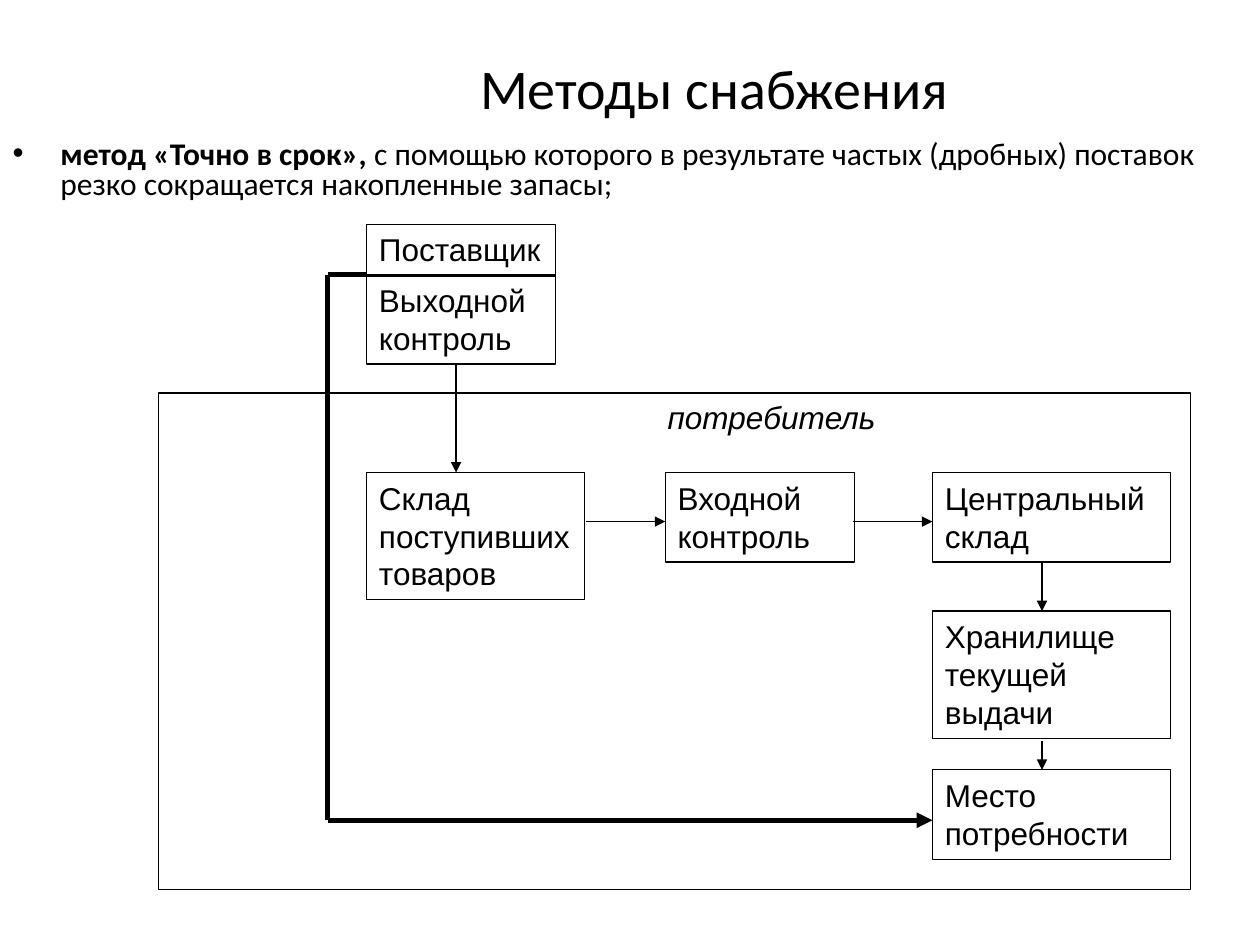
from dataclasses import dataclass
from typing import Optional

from lxml.etree import SubElement
from pptx import Presentation
from pptx.dml.color import RGBColor
from pptx.enum.shapes import MSO_CONNECTOR, MSO_SHAPE
from pptx.enum.text import MSO_ANCHOR, MSO_AUTO_SIZE, PP_ALIGN
from pptx.oxml.ns import qn
from pptx.util import Emu, Pt

PX = 9144  # EMU per px, 100 px to the inch


@dataclass(frozen=True)
class Theme:
    ink: RGBColor = RGBColor(0, 0, 0)
    heading_font: str = "Calibri"
    diagram_font: str = "Arial"
    title_size: Pt = Pt(32)
    text_size: Pt = Pt(18)
    thin: Pt = Pt(0.75)
    thick: Pt = Pt(3)


@dataclass(frozen=True)
class Box:
    left: int
    top: int
    width: int
    height: int
    label: Optional[str] = None


@dataclass(frozen=True)
class Link:
    x1: int
    y1: int
    x2: int
    y2: int
    weight: Pt
    arrow: bool = True


THEME = Theme()


def px(length: int) -> Emu:
    return Emu(length * PX)


def place(shape, box: Box) -> None:
    shape.left, shape.top = px(box.left), px(box.top)
    shape.width, shape.height = px(box.width), px(box.height)


def style_font(font, name: str, size: Pt) -> None:
    font.name, font.size = name, size
    font.color.rgb = THEME.ink


def write_label(shape, label: str, italic: bool = False) -> None:
    frame = shape.text_frame
    frame.word_wrap = True
    frame.auto_size = MSO_AUTO_SIZE.SHAPE_TO_FIT_TEXT
    frame.vertical_anchor = MSO_ANCHOR.TOP
    paragraph = frame.paragraphs[0]
    paragraph.text = label
    paragraph.alignment = PP_ALIGN.LEFT
    style_font(paragraph.font, THEME.diagram_font, THEME.text_size)
    paragraph.font.italic = italic


def draw_box(slide, box: Box) -> None:
    rect = slide.shapes.add_shape(MSO_SHAPE.RECTANGLE, 0, 0, 0, 0)
    place(rect, box)
    rect.shadow.inherit = False
    rect.fill.background()
    rect.line.color.rgb = THEME.ink
    rect.line.width = THEME.thin
    if box.label:
        write_label(rect, box.label)


def draw_link(slide, link: Link) -> None:
    line = slide.shapes.add_connector(
        MSO_CONNECTOR.STRAIGHT, px(link.x1), px(link.y1), px(link.x2), px(link.y2))
    line.line.color.rgb = THEME.ink
    line.line.width = link.weight
    properties = line._element.spPr
    if link.arrow:
        SubElement(properties.find(qn("a:ln")), qn("a:tailEnd"), type="triangle")
    SubElement(properties, qn("a:effectLst"))


def fill_title(slide) -> None:
    title = slide.shapes.title
    place(title, Box(217, 36, 700, 66))
    title.text_frame.auto_size = MSO_AUTO_SIZE.NONE
    title.text_frame.vertical_anchor = MSO_ANCHOR.MIDDLE
    heading = title.text_frame.paragraphs[0]
    heading.text = "Методы снабжения"
    heading.alignment = PP_ALIGN.CENTER
    style_font(heading.font, THEME.heading_font, THEME.title_size)


def fill_body(slide) -> None:
    body = slide.placeholders[1]
    place(body, Box(0, 107, 1000, 79))
    body.text_frame.auto_size = MSO_AUTO_SIZE.NONE
    method = body.text_frame.paragraphs[0]
    method.line_spacing = 0.8
    style_font(method.font, THEME.heading_font, THEME.text_size)
    method.add_run().text = "метод «Точно в срок»,"
    method.runs[0].font.bold = True
    method.add_run().text = (" с помощью которого в результате частых (дробных) "
                             "поставок резко сокращается накопленные запасы;")
    indent = px(38)
    bullet = method._p.get_or_add_pPr()
    bullet.set("marL", str(indent))
    bullet.set("indent", str(-indent))


# Shared grid of the diagram
SUPPLIER_X, CHECK_X, STORE_X = 291, 528, 740
ROW_Y, SPLIT_Y, FLOW_Y = 375, 218, 414
SHORT, STORE_W = 150, 189
TWO_LINES, THREE_LINES = 71, 101
BYPASS_X, BYPASS_Y = 260, 651
DOWN_X, STORE_DOWN_X = 362, 827

BOXES = [
    Box(SUPPLIER_X, 178, SHORT, 41, "Поставщик"),
    Box(SUPPLIER_X, SPLIT_Y, SHORT, TWO_LINES, "Выходной контроль"),
    Box(SUPPLIER_X, ROW_Y, 173, THREE_LINES, "Склад поступивших товаров"),
    Box(CHECK_X, ROW_Y, SHORT, TWO_LINES, "Входной контроль"),
    Box(STORE_X, ROW_Y, STORE_W, TWO_LINES, "Центральный склад"),
    Box(STORE_X, 485, STORE_W, THREE_LINES, "Хранилище текущей выдачи"),
    Box(STORE_X, 611, STORE_W, TWO_LINES, "Место потребности"),
]
CONSUMER_LABEL = Box(520, 311, 213, 40, "потребитель")
CONSUMER_FRAME = Box(126, 312, 819, 394)

LINKS = [
    # Direct delivery past the warehouses
    Link(SUPPLIER_X, SPLIT_Y, BYPASS_X, SPLIT_Y, THEME.thick, arrow=False),
    Link(BYPASS_X, SPLIT_Y, BYPASS_X, BYPASS_Y, THEME.thick, arrow=False),
    Link(BYPASS_X, BYPASS_Y, STORE_X, BYPASS_Y, THEME.thick),
    # Usual step-by-step route
    Link(DOWN_X, 288, DOWN_X, ROW_Y, THEME.thin),
    Link(465, FLOW_Y, CHECK_X, FLOW_Y, THEME.thin),
    Link(677, FLOW_Y, STORE_X, FLOW_Y, THEME.thin),
    Link(STORE_DOWN_X, 446, STORE_DOWN_X, 485, THEME.thin),
    Link(STORE_DOWN_X, 588, STORE_DOWN_X, 611, THEME.thin),
]


def main() -> None:
    deck = Presentation()
    deck.slide_width, deck.slide_height = px(1000), px(750)
    slide = deck.slides.add_slide(deck.slide_layouts[1])

    # Heading and description
    fill_title(slide)
    fill_body(slide)

    # Supply chain stages
    for box in BOXES:
        draw_box(slide, box)

    # Consumer area
    consumer = slide.shapes.add_textbox(0, 0, 0, 0)
    place(consumer, CONSUMER_LABEL)
    write_label(consumer, CONSUMER_LABEL.label, italic=True)
    draw_box(slide, CONSUMER_FRAME)

    # Flows
    for link in LINKS:
        draw_link(slide, link)

    deck.save("out.pptx")


if __name__ == "__main__":
    main()
